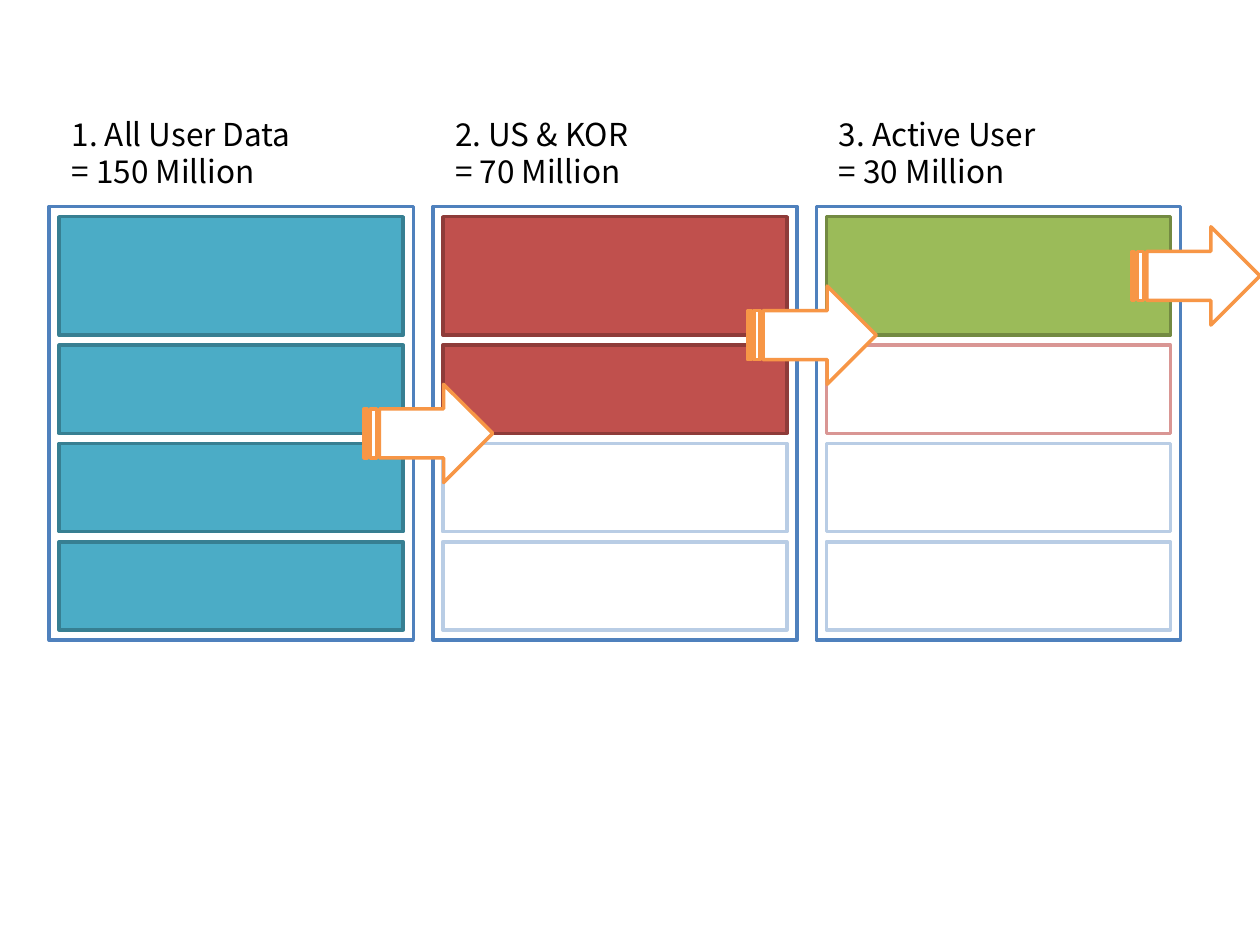
"""Build a slide showing user data narrowed down in three stages."""
from pptx import Presentation
from pptx.dml.color import RGBColor
from pptx.enum.shapes import MSO_SHAPE
from pptx.enum.text import MSO_AUTO_SIZE
from pptx.util import Inches, Pt

RECT = MSO_SHAPE.RECTANGLE
ARROW = MSO_SHAPE.STRIPED_RIGHT_ARROW
FIT_SHAPE = MSO_AUTO_SIZE.SHAPE_TO_FIT_TEXT
FONT = "Noto Sans CJK KR"

COLORS = {
    "white": "FFFFFF", "black": "000000", "frame": "4F81BD", "arrow": "F79646",
    "teal": "4BACC6", "teal_line": "377F92",
    "red": "C0504D", "red_line": "8E3B39",
    "green": "9BBB59", "green_line": "738A42",
    "pale_blue": "B9CDE5", "pale_red": "D99694",
}
ALL_USERS = ("teal", "teal_line")
REGION = ("red", "red_line")
ACTIVE = ("green", "green_line")
OUTSIDE_REGION = ("white", "pale_blue")
INACTIVE = ("white", "pale_red")

STAGES = [
    {"title": ["1. All User Data", "= 150 Million"], "title_width": 2.08,
     "blocks": [ALL_USERS] * 4, "arrow_top": 3.05},
    {"title": ["2. US & KOR", "= 70 Million"], "title_width": 1.67,
     "blocks": [REGION] * 2 + [OUTSIDE_REGION] * 2, "arrow_top": 2.27},
    {"title": ["3. Active User", "= 30 Million"], "title_width": 1.78,
     "blocks": [ACTIVE, INACTIVE] + [OUTSIDE_REGION] * 2, "arrow_top": 1.8},
]

LEFT, PITCH = 0.39, 6.09 / 2
FRAME_TOP, FRAME_W, FRAME_H = 1.64, 2.89, 3.44
GAP = 0.08
BLOCK_W = FRAME_W - 2 * GAP
BLOCK_HEIGHTS = [0.94, 0.7, 0.7, 0.7]
TITLE_TOP, TITLE_H = 0.86, 0.71
ARROW_DX, ARROW_W, ARROW_H = 2.5, 1.02, 0.78


def color(name):
    return RGBColor.from_string(COLORS[name])


def add_box(slide, kind, left, top, width, height, fill, line):
    s = slide.shapes.add_shape(
        kind, Inches(left), Inches(top), Inches(width), Inches(height))
    s.shadow.inherit = False
    s.fill.solid()
    s.fill.fore_color.rgb = color(fill)
    s.line.color.rgb = color(line)
    s.line.width = Pt(2)


def add_text(slide, lines, left, top, width, height, size=18, ink="black"):
    tf = slide.shapes.add_textbox(
        Inches(left), Inches(top), Inches(width), Inches(height)).text_frame
    tf.word_wrap = False
    tf.auto_size = FIT_SHAPE
    for i, line in enumerate(lines):
        p = tf.add_paragraph() if i else tf.paragraphs[0]
        r = p.add_run()
        r.text = line
        r.font.name = FONT
        r.font.size = Pt(size)
        r.font.color.rgb = color(ink)


def main():
    prs = Presentation()
    prs.slide_width, prs.slide_height = Inches(10), Inches(7.5)
    slide = prs.slides.add_slide(prs.slide_layouts[6])

    for i, stage in enumerate(STAGES):
        left = LEFT + i * PITCH
        add_box(slide, RECT, left, FRAME_TOP, FRAME_W, FRAME_H, "white", "frame")
        top = FRAME_TOP + GAP
        for (fill, line), height in zip(stage["blocks"], BLOCK_HEIGHTS):
            add_box(slide, RECT, left + GAP, top, BLOCK_W, height, fill, line)
            top += height + GAP
        add_text(slide, stage["title"], left + GAP, TITLE_TOP,
                 stage["title_width"], TITLE_H)

    for i, stage in enumerate(STAGES):
        add_box(slide, ARROW, LEFT + i * PITCH + ARROW_DX, stage["arrow_top"],
                ARROW_W, ARROW_H, "white", "arrow")

    prs.save("out.pptx")


if __name__ == "__main__":
    main()
